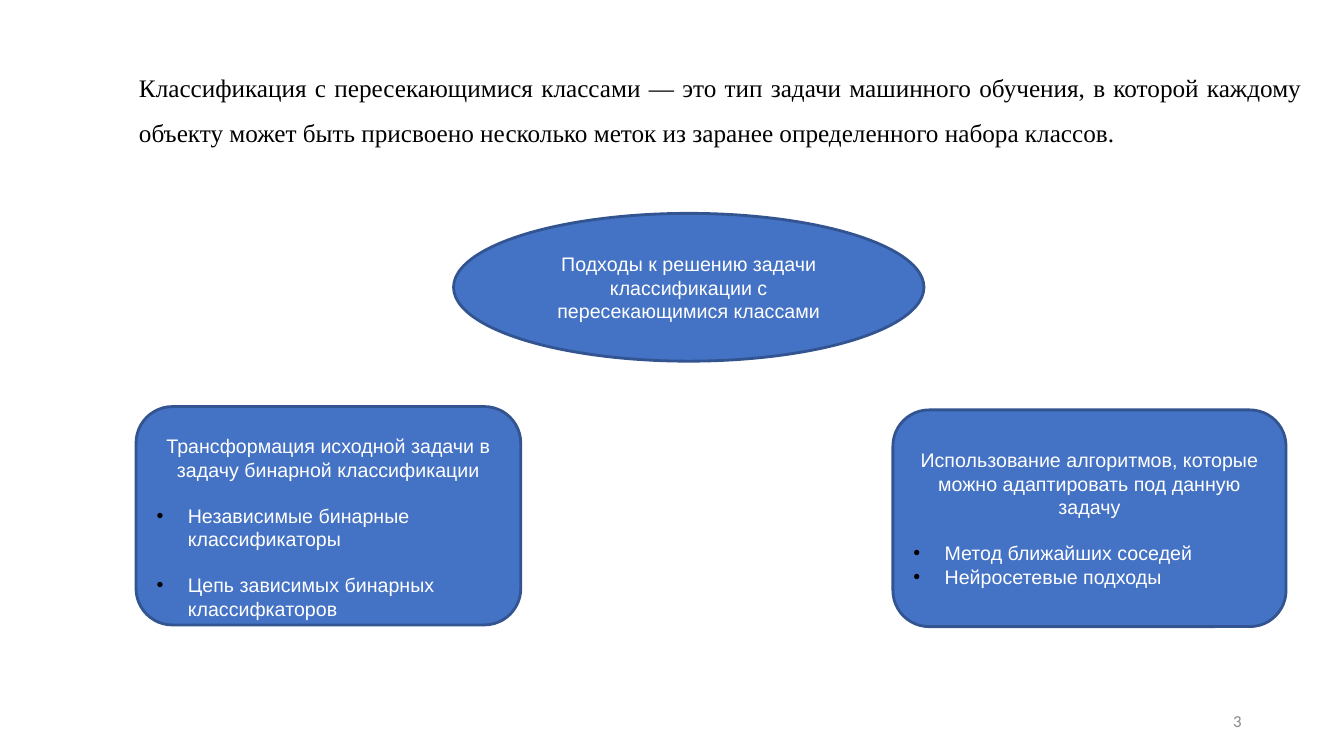
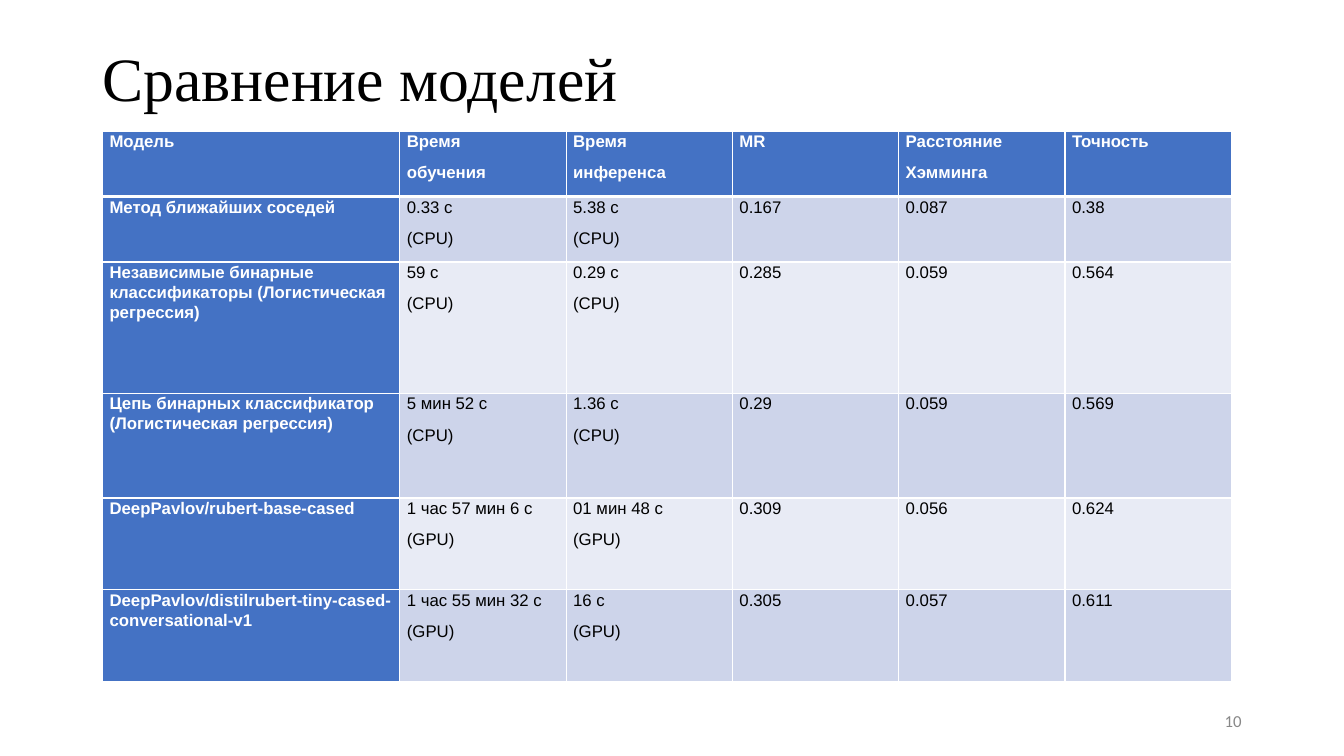
from lxml import etree
from pptx import Presentation
from pptx import util as u
from pptx.dml.color import RGBColor
from pptx.enum import shapes, text
from pptx.oxml import ns

COLORS = {
    "blue": "4472C4", "outline": "325491", "white": "FFFFFF", "black": "000000",
    "gray": "888888", "band_dark": "CDD4EA", "band_light": "E8EBF5",
}
WIDTH, HEIGHT = u.Inches(13.33), u.Inches(7.5)
COLUMNS, ROWS = 160, 90  # slide grid
LEFT, CENTER = text.PP_ALIGN.LEFT, text.PP_ALIGN.CENTER
RIGHT, JUSTIFY = text.PP_ALIGN.RIGHT, text.PP_ALIGN.JUSTIFY
TOP, MIDDLE = text.MSO_ANCHOR.TOP, text.MSO_ANCHOR.MIDDLE

# Text styles: font values and paragraph values
STYLES = {
    "title": ({"name": "Times New Roman", "size": u.Pt(44), "color": "black"},
              {"alignment": LEFT, "line_spacing": 0.9}),
    "body": ({"name": "Times New Roman", "size": u.Pt(18), "color": "black"},
             {"alignment": JUSTIFY, "line_spacing": 1.5, "space_before": u.Pt(0),
              "space_after": u.Pt(8)}),
    "number": ({"name": "Calibri", "size": u.Pt(12), "color": "gray"},
               {"alignment": RIGHT}),
    "node": ({"name": "Arial", "size": u.Pt(14), "color": "white"},
             {"alignment": CENTER}),
    "item": ({"name": "Arial", "size": u.Pt(14), "color": "white"},
             {"alignment": LEFT}),
    "head": ({"name": "Arial", "size": u.Pt(12), "color": "white", "bold": True},
             {"line_spacing": 1.07, "space_after": u.Pt(8)}),
    "value": ({"name": "Arial", "size": u.Pt(12), "color": "black", "bold": False},
              {"line_spacing": 1.07, "space_after": u.Pt(8)}),
}
BLANK_LINE = u.Pt(16)

DEFINITION = ("Классификация с пересекающимися классами — это тип задачи машинного "
              "обучения, в которой каждому объекту может быть присвоено несколько "
              "меток из заранее определенного набора классов.")
APPROACHES = "Подходы к решению задачи классификации с пересекающимися классами"
TRANSFORMATION = ("Трансформация исходной задачи в задачу бинарной классификации",
                  ["Независимые бинарные классификаторы",
                   "Цепь зависимых бинарных классифкаторов"])
ADAPTATION = ("Использование алгоритмов, которые можно адаптировать под данную задачу",
              ["Метод ближайших соседей", "Нейросетевые подходы"])
MODELS = [
    ["Модель", "Время\nобучения", "Время\nинференса", "MR",
     "Расстояние\nХэмминга", "Точность"],
    ["Метод ближайших соседей", "0.33 с\n(CPU)", "5.38 с\n(CPU)",
     "0.167", "0.087", "0.38"],
    ["Независимые бинарные классификаторы (Логистическая регрессия)",
     "59 с\n(CPU)", "0.29 с\n(CPU)", "0.285", "0.059", "0.564"],
    ["Цепь бинарных классификатор (Логистическая регрессия)",
     "5 мин 52 с\n(CPU)", "1.36 с\n(CPU)", "0.29", "0.059", "0.569"],
    ["DeepPavlov/rubert-base-cased", "1 час 57 мин 6 с\n(GPU)",
     "01 мин 48 с\n(GPU)", "0.309", "0.056", "0.624"],
    ["DeepPavlov/distilrubert-tiny-cased-conversational-v1",
     "1 час 55 мин 32 с\n(GPU)", "16 с\n(GPU)", "0.305", "0.057", "0.611"],
]
MODEL_COLUMNS = [35.4] + [19.8] * 5
MODEL_ROWS = [7.8, 7.8, 15.6, 12.5, 10.9, 10.9]


# Grid and formatting helpers
def across(columns):
    return round(WIDTH * columns / COLUMNS)


def down(rows):
    return round(HEIGHT * rows / ROWS)


def area(left, top, width, height):
    return across(left), down(top), across(width), down(height)


def color(name):
    return RGBColor.from_string(COLORS[name])


def apply(target, values):
    for name, value in values.items():
        if name == "color":
            target.color.rgb = color(value)
        else:
            setattr(target, name, value)


def add_fill(parent, name):
    fill = etree.SubElement(parent, ns.qn("a:solidFill"))
    etree.SubElement(fill, ns.qn("a:srgbClr"), val=COLORS[name])


def write(para, words, style):
    font, layout = STYLES[style]
    para.text = words
    apply(para, layout)
    apply(para.runs[0].font, font)


def set_frame(frame, anchor, **margins):
    apply(frame, {"word_wrap": True, "auto_size": text.MSO_AUTO_SIZE.NONE,
                  "vertical_anchor": anchor, **margins})


def set_indent(para, left, first):
    props = para._p.get_or_add_pPr()
    props.set("marL", str(u.Inches(left)))
    props.set("indent", str(u.Inches(first)))
    return props


def add_bullet(para):
    props = set_indent(para, 0.31, -0.31)
    etree.SubElement(etree.SubElement(props, ns.qn("a:buClr")),
                     ns.qn("a:srgbClr"), val=COLORS["black"])
    etree.SubElement(props, ns.qn("a:buFont"), typeface="Arial")
    etree.SubElement(props, ns.qn("a:buChar"), char="•")


# Slide parts
def add_page(deck, layout, number):
    page = deck.slides.add_slide(deck.slide_layouts[layout])
    box = page.shapes.add_textbox(*area(113, 83.4, 36, 4.8))
    set_frame(box.text_frame, MIDDLE)
    write(box.text_frame.paragraphs[0], number, "number")
    return page


def fill_placeholder(box, place, words, style, anchor):
    apply(box, dict(zip(("left", "top", "width", "height"), area(*place))))
    set_frame(box.text_frame, anchor)
    para = box.text_frame.paragraphs[0]
    write(para, words, style)
    return para


def add_node(page, kind, place, words):
    node = page.shapes.add_shape(kind, *area(*place))
    node.shadow.inherit = False
    node.fill.solid()
    node.fill.fore_color.rgb = color("blue")
    apply(node.line, {"color": "outline", "width": u.Pt(2)})
    set_frame(node.text_frame, MIDDLE)
    write(node.text_frame.paragraphs[0], words, "node")
    return node.text_frame


def add_approach(page, place, content, item_gap=0):
    heading, items = content
    frame = add_node(page, shapes.MSO_SHAPE.FLOWCHART_ALTERNATE_PROCESS, place, heading)
    for index, item in enumerate(items):
        para = frame.add_paragraph()
        add_bullet(para)
        write(para, item, "item")
        para.space_before = item_gap if index else BLANK_LINE
    return frame


def fill_cell(cell, words, style, fill, borders):
    apply(cell, {"margin_left": u.Inches(0.07), "margin_right": u.Inches(0.07),
                 "margin_top": 0, "margin_bottom": 0, "vertical_anchor": TOP})
    props = cell._tc.get_or_add_tcPr()
    for side, width in borders.items():
        add_fill(etree.SubElement(props, ns.qn(f"a:ln{side}"), w=str(u.Pt(width))), "white")
    cell.fill.solid()
    cell.fill.fore_color.rgb = color(fill)
    frame = cell.text_frame
    for index, line in enumerate(words.split("\n")):
        para = frame.add_paragraph() if index else frame.paragraphs[0]
        write(para, line, style)


def add_model_table(page, left, top):
    place = area(left, top, sum(MODEL_COLUMNS), sum(MODEL_ROWS))
    table = page.shapes.add_table(len(MODEL_ROWS), len(MODEL_COLUMNS), *place).table
    apply(table, {"first_row": False, "horz_banding": False})
    for column, width in zip(table.columns, MODEL_COLUMNS):
        column.width = across(width)
    for row, height in zip(table.rows, MODEL_ROWS):
        row.height = down(height)
    for r, values in enumerate(MODELS):
        borders = {"L": 1, "R": 1, "T": 3 if r == 1 else 1, "B": 3 if r == 0 else 1}
        for c, words in enumerate(values):
            is_head = r == 0 or c == 0
            band = "band_dark" if r % 2 else "band_light"
            fill_cell(table.cell(r, c), words, "head" if is_head else "value",
                      "blue" if is_head else band, borders)


# Slides
def add_approaches_page(deck):
    page = add_page(deck, 1, "3")
    title = page.shapes.title
    title.element.getparent().remove(title.element)
    para = fill_placeholder(page.placeholders[1], (7.9, 6.2, 148.3, 17.6),
                            DEFINITION, "body", TOP)
    etree.SubElement(set_indent(para, 0.62, 0), ns.qn("a:buNone"))
    add_node(page, shapes.MSO_SHAPE.OVAL, (54, 25.4, 56, 17.6), APPROACHES)
    frame = add_approach(page, (16.2, 48.4, 45.8, 26), TRANSFORMATION, BLANK_LINE)
    set_frame(frame, TOP, margin_top=u.Inches(0.17), margin_bottom=0)
    add_approach(page, (106.3, 48.8, 46.8, 25.8), ADAPTATION)


def add_comparison_page(deck):
    page = add_page(deck, 5, "10")
    fill_placeholder(page.shapes.title, (11, 4.8, 138, 9.8),
                     "Сравнение моделей", "title", MIDDLE)
    add_model_table(page, 12.2, 15.6)


def main():
    deck = Presentation()
    apply(deck, {"slide_width": WIDTH, "slide_height": HEIGHT})
    add_approaches_page(deck)
    add_comparison_page(deck)
    deck.save("out.pptx")


if __name__ == "__main__":
    main()
